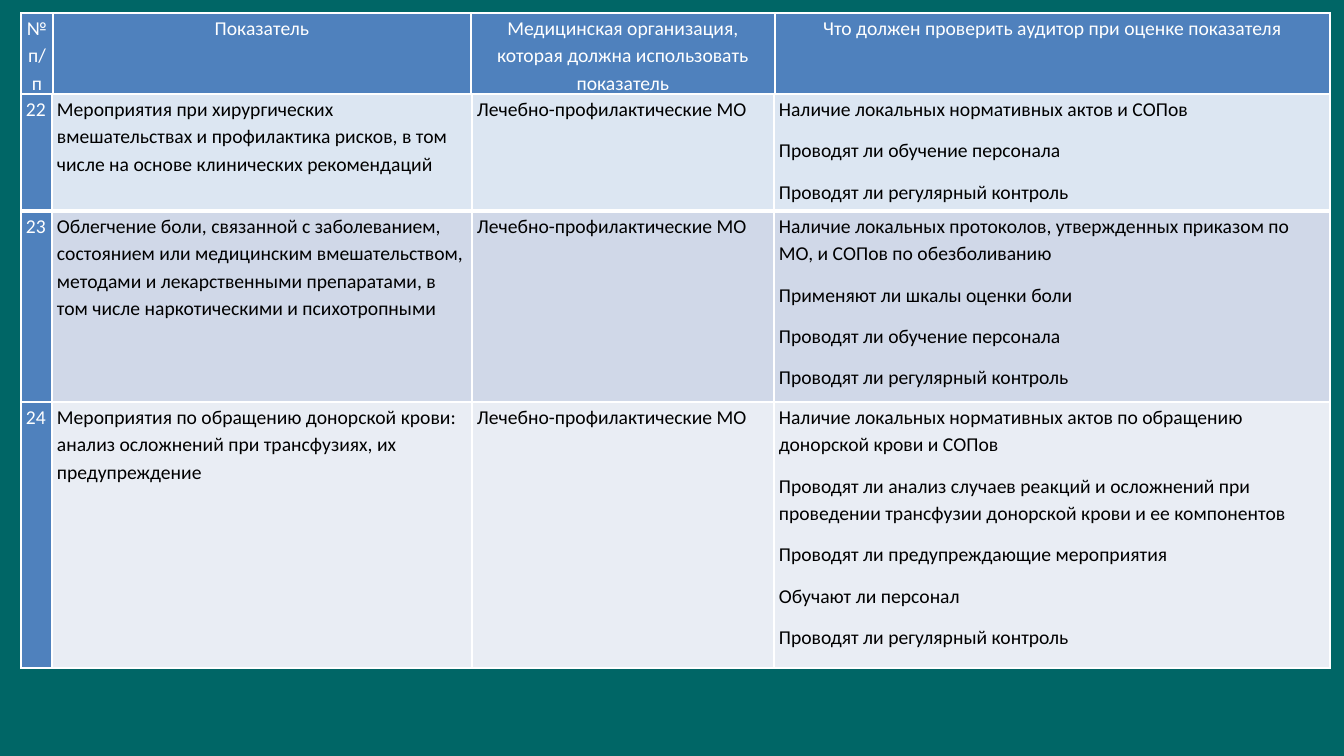
from lxml.etree import SubElement as Sub
from pptx import Presentation
from pptx.dml.color import RGBColor as RGB
from pptx.enum.text import PP_ALIGN as Align
from pptx.oxml.ns import qn
from pptx.util import Pt

PX = 914400 / 100.8
TEAL = RGB(0x00, 0x66, 0x66)
BLUE = RGB(0x4F, 0x81, 0xBD)
WHITE = RGB(0xFF, 0xFF, 0xFF)
BLACK = RGB(0x00, 0x00, 0x00)
BANDS = [RGB(0xDC, 0xE6, 0xF2), RGB(0xD0, 0xD8, 0xE8), RGB(0xE9, 0xED, 0xF4)]

HEADS = ["№ п/п", "Показатель",
         "Медицинская организация, которая должна использовать показатель",
         "Что должен проверить аудитор при оценке показателя"]
CLINIC = "Лечебно-профилактические МО"
TRAIN = "Проводят ли обучение персонала"
CHECK = "Проводят ли регулярный контроль"
ROWS = [
    ("22", "Мероприятия при хирургических вмешательствах и профилактика рисков, "
     "в том числе на основе клинических рекомендаций",
     ["Наличие локальных нормативных актов и СОПов", TRAIN, CHECK]),
    ("23", "Облегчение боли, связанной с заболеванием, состоянием или медицинским "
     "вмешательством, методами и лекарственными препаратами, в том числе "
     "наркотическими и психотропными",
     ["Наличие локальных протоколов, утвержденных приказом по МО, и СОПов по обезболиванию",
      "Применяют ли шкалы оценки боли", TRAIN, CHECK]),
    ("24", "Мероприятия по обращению донорской крови: анализ осложнений при "
     "трансфузиях, их предупреждение",
     ["Наличие локальных нормативных актов по обращению донорской крови и СОПов",
      "Проводят ли анализ случаев реакций и осложнений при проведении трансфузии "
      "донорской крови и ее компонентов",
      "Проводят ли предупреждающие мероприятия", "Обучают ли персонал", CHECK]),
]


def px(n):
    return round(n * PX)


def write(frame, lines, color=BLACK, align=Align.LEFT, size=14):
    for i, line in enumerate(lines):
        para = frame.paragraphs[0] if i == 0 else frame.add_paragraph()
        para.alignment = align
        para.line_spacing = 1.15
        para.space_after = Pt(10)
        run = para.add_run()
        run.text = line
        run.font.name = "Calibri"
        run.font.size = Pt(size)
        run.font.color.rgb = color


def edge(cell, base):
    """Draw white cell borders, the bottom one base points wide."""
    props = cell._tc.get_or_add_tcPr()
    for side in "LRTB":
        width = base if side == "B" else 1
        line = Sub(props, qn("a:ln" + side), w=str(Pt(width)))
        fill = Sub(line, qn("a:solidFill"))
        Sub(fill, qn("a:srgbClr"), val=str(WHITE))


def style(cell, fill, pad, base):
    cell.margin_left = cell.margin_right = px(pad)
    cell.margin_top = cell.margin_bottom = 0
    edge(cell, base)
    cell.fill.solid()
    cell.fill.fore_color.rgb = fill


def grid(slide, left, top, cols, rows):
    frame = slide.shapes.add_table(len(rows), len(cols), px(left), px(top),
                                   px(sum(cols)), px(sum(rows)))
    table = frame.table
    table.first_row = table.horz_banding = False
    for col, width in zip(table.columns, cols):
        col.width = px(width)
    for row, height in zip(table.rows, rows):
        row.height = px(height)
    return table


def header(slide, left, top):
    table = grid(slide, left, top, [32, 418, 304, 555], [82])
    for cell, text in zip(table.rows[0].cells, HEADS):
        style(cell, BLUE, pad=3, base=3)
        write(cell.text_frame, [text], color=WHITE, align=Align.CENTER)


def body(slide, left, top):
    table = grid(slide, left, top, [31, 420, 302, 556], [117, 191, 266])
    for r, (num, title, checks) in enumerate(ROWS):
        texts = [[num], [title], [CLINIC], checks]
        for c, (cell, lines) in enumerate(zip(table.rows[r].cells, texts)):
            style(cell, BANDS[r] if c else BLUE, pad=5, base=1 if r else 3)
            write(cell.text_frame, lines, color=BLACK if c else WHITE)


def main():
    deck = Presentation()
    deck.slide_width, deck.slide_height = px(1344), px(756)
    slide = deck.slides.add_slide(deck.slide_layouts[6])
    back = slide.background.fill
    back.solid()
    back.fore_color.rgb = TEAL
    header(slide, 21, 13)
    body(slide, 21, 94)
    deck.save("out.pptx")


if __name__ == "__main__":
    main()
